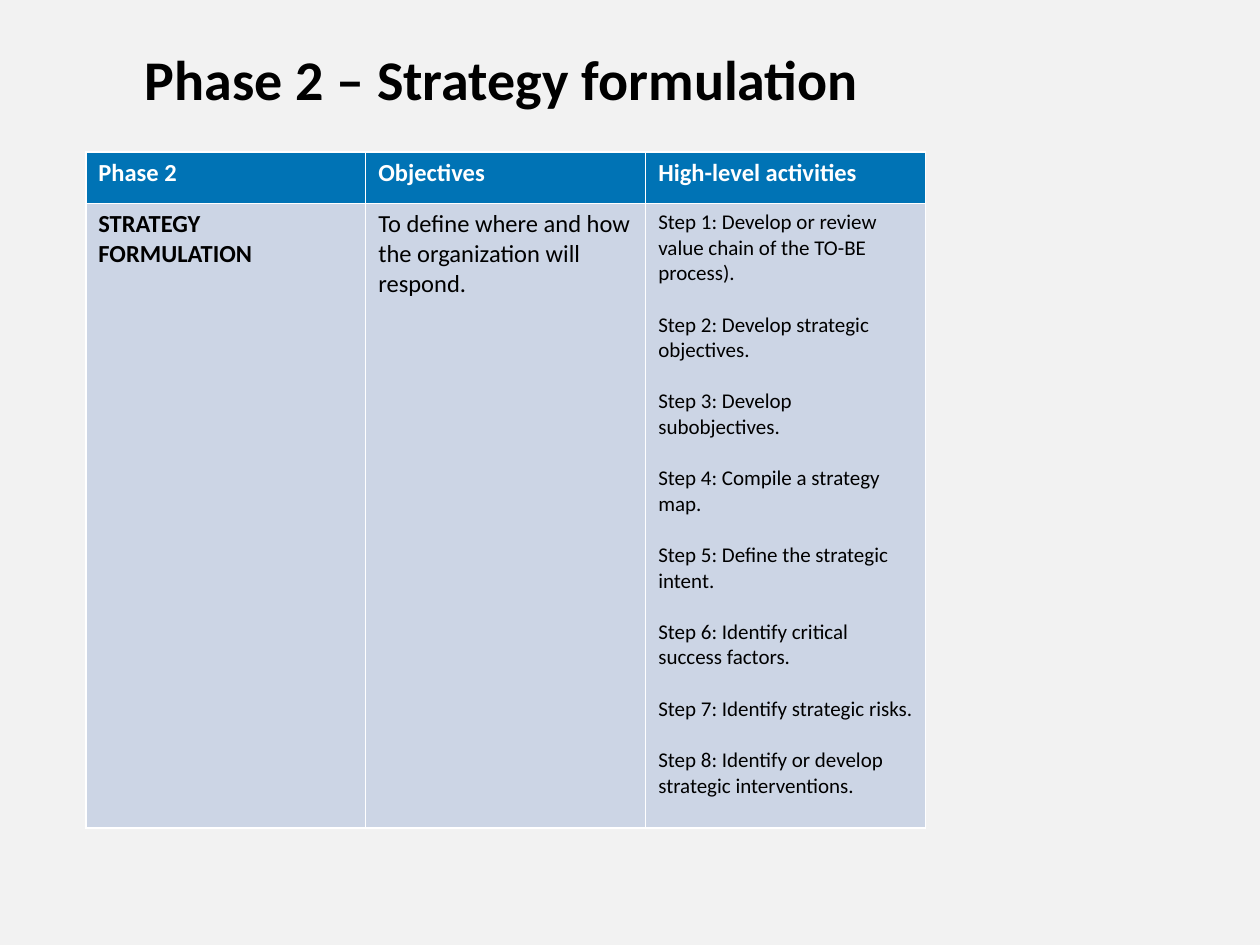
from dataclasses import dataclass

from pptx import Presentation
from pptx.dml.color import RGBColor
from pptx.enum.text import MSO_ANCHOR, PP_ALIGN
from pptx.util import Pt


@dataclass(frozen=True)
class Theme:
    font: str = "Calibri"
    back: str = "F2F2F2"
    head: str = "0073B5"
    body: str = "CCD5E5"
    dark: str = "000000"
    light: str = "FFFFFF"
    title: float = 32
    text: float = 14
    small: float = 12
    gap: float = 14.65


@dataclass(frozen=True)
class Column:
    head: str
    lines: tuple[str, ...]
    size: float
    bold: bool = False


THEME = Theme()
STEPS = (
    "Step 1: Develop or review value chain of the TO-BE process).",
    "Step 2: Develop strategic objectives.",
    "Step 3: Develop subobjectives.",
    "Step 4: Compile a strategy map.",
    "Step 5: Define the strategic intent.",
    "Step 6: Identify critical",
    "success factors.",
    "Step 7: Identify strategic risks.",
    "Step 8: Identify or develop strategic interventions.",
)
COLUMNS = (
    Column("Phase 2", ("STRATEGY FORMULATION",), THEME.text, True),
    Column("Objectives",
           ("To define where and how the organization will respond.",),
           THEME.text),
    Column("High-level activities", STEPS, THEME.small),
)


def write(frame, lines: tuple[str, ...], size: float, color: str,
          bold: bool) -> None:
    frame.text = "\n".join(lines)
    for index, para in enumerate(frame.paragraphs):
        para.alignment = PP_ALIGN.LEFT
        if index and para.text.startswith("Step"):
            para.space_before = Pt(THEME.gap)
        for run in para.runs:
            font = run.font
            font.name = THEME.font
            font.size = Pt(size)
            font.bold = bold
            font.color.rgb = RGBColor.from_string(color)


def paint(fill, color: str) -> None:
    fill.solid()
    fill.fore_color.rgb = RGBColor.from_string(color)


def add_title(slide, text: str) -> None:
    title = slide.shapes.title
    title.left, title.top = Pt(75.6), Pt(21.6)
    title.width, title.height = Pt(524), Pt(46)
    title.text_frame.vertical_anchor = MSO_ANCHOR.TOP
    write(title.text_frame, (text,), THEME.title, THEME.dark, True)


def add_grid(slide, columns: tuple[Column, ...]) -> None:
    heights = (29.2, 357)
    grid = slide.shapes.add_table(
        len(heights), len(columns), Pt(49), Pt(87),
        Pt(160 * len(columns)), Pt(sum(heights))).table
    for row, height in zip(grid.rows, heights):
        row.height = Pt(height)
    for index, column in enumerate(columns):
        head, body = grid.cell(0, index), grid.cell(1, index)
        paint(head.fill, THEME.head)
        paint(body.fill, THEME.body)
        write(head.text_frame, (column.head,), THEME.text, THEME.light, True)
        write(body.text_frame, column.lines, column.size, THEME.dark,
              column.bold)


def main() -> None:
    deck = Presentation()
    deck.slide_width, deck.slide_height = Pt(720), Pt(540)
    slide = deck.slides.add_slide(deck.slide_layouts[5])
    paint(slide.background.fill, THEME.back)
    add_title(slide, "Phase 2 – Strategy formulation")
    add_grid(slide, COLUMNS)
    deck.save("out.pptx")


if __name__ == "__main__":
    main()
